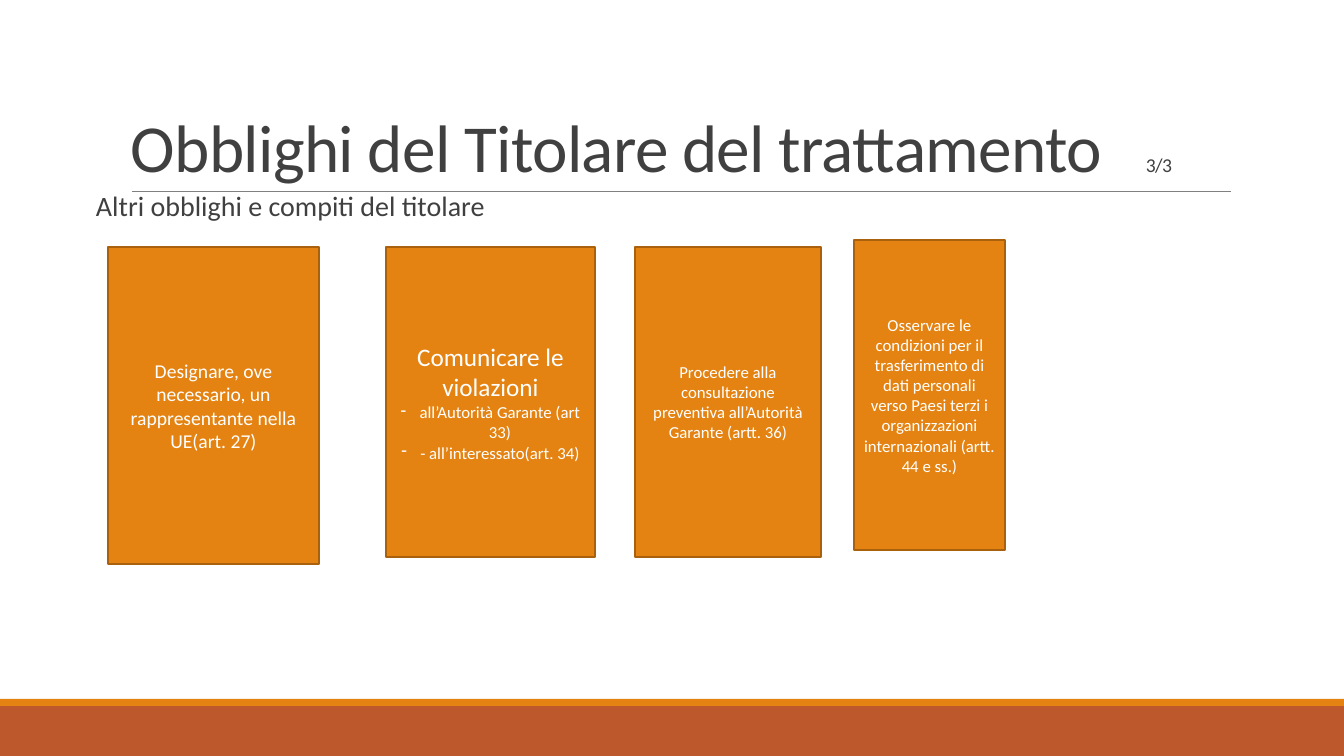
import pptx
import pptx.util
import pptx.dml.color
import pptx.enum.shapes
import pptx.enum.text
import pptx.oxml
import pptx.oxml.ns

WIDE, HIGH = 1344, 756
SCALE = 12192000 / WIDE
FONT = "Calibri"
ORANGE, RUST, EDGE = "E48312", "BD582C", "A9610D"
DARK, GRAY, WHITE = "404040", "808080", "FFFFFF"
ALIGN = pptx.enum.text.PP_ALIGN
ANCHOR = pptx.enum.text.MSO_ANCHOR

# left, top, width, height, lines of (text, size, dashed)
CARDS = [
    (108, 247, 211, 317, [
        ("Designare, ove necessario, un rappresentante nella UE(art. 27)", 14, False)]),
    (386, 247, 209, 310, [
        ("Comunicare le violazioni", 18, False),
        ("all’Autorità Garante (art 33)", 12, True),
        ("- all’interessato(art. 34)", 12, True)]),
    (635, 247, 186, 310, [
        ("Procedere alla consultazione preventiva all’Autorità Garante (artt. 36)", 12, False)]),
    (854, 240, 151, 310, [
        ("Osservare le condizioni per il trasferimento di dati personali verso Paesi "
         "terzi i organizzazioni internazionali (artt. 44 e ss.)", 12, False)]),
]


def px(n):
    return pptx.util.Emu(round(n * SCALE))


def color(code):
    return pptx.dml.color.RGBColor.from_string(code)


def style(para, size, code):
    para.font.name = FONT
    para.font.size = pptx.util.Pt(size)
    para.font.color.rgb = color(code)


def add_prop(para, xml):
    """Put a bullet or tab list ahead of the paragraph's font settings."""
    head, tail = xml.split(" ", 1)
    node = pptx.oxml.parse_xml(f"{head} {pptx.oxml.ns.nsdecls('a')} {tail}")
    font = para._p.pPr.find(pptx.oxml.ns.qn("a:defRPr"))
    font.addprevious(node)


def add_rect(slide, left, top, width, height, fill, edge=None):
    kind = pptx.enum.shapes.MSO_SHAPE.RECTANGLE
    rect = slide.shapes.add_shape(kind, px(left), px(top), px(width), px(height))
    rect.shadow.inherit = False
    rect.fill.solid()
    rect.fill.fore_color.rgb = color(fill)
    if edge:
        rect.line.color.rgb = color(edge)
        rect.line.width = pptx.util.Pt(1.25)
    else:
        rect.line.fill.background()
    return rect


def add_rule(slide, left, right, y):
    kind = pptx.enum.shapes.MSO_CONNECTOR.STRAIGHT
    rule = slide.shapes.add_connector(kind, px(left), px(y), px(right), px(y))
    rule.line.color.rgb = color(GRAY)
    rule.line.width = pptx.util.Pt(0.5)
    props = rule._element.spPr
    props.append(props.makeelement(pptx.oxml.ns.qn("a:effectLst"), {}))


def add_text(slide, left, top, width, height, text, size, space):
    box = slide.shapes.add_textbox(px(left), px(top), px(width), px(height))
    frame = box.text_frame
    frame.word_wrap = True
    para = frame.paragraphs[0]
    para.line_spacing = space
    para.add_run().text = text
    style(para, size, DARK)
    return frame


def add_title(slide):
    frame = add_text(slide, 121, 31, 1109, 160,
                     "Obblighi del Titolare del trattamento", 48, 0.85)
    frame.vertical_anchor = ANCHOR.BOTTOM
    para = frame.paragraphs[0]
    count = para.add_run()
    count.text = "\t3/3"
    count.font.size = pptx.util.Pt(14)
    add_prop(para, f'<a:tabLst ><a:tab pos="{px(1015)}" algn="l"/></a:tabLst>')
    for run in para.runs:
        run.font._element.set("spc", "-50")


def add_card(slide, left, top, width, height, lines):
    card = add_rect(slide, left, top, width, height, ORANGE, EDGE)
    frame = card.text_frame
    frame.word_wrap = True
    frame.vertical_anchor = ANCHOR.MIDDLE
    for i, (text, size, dashed) in enumerate(lines):
        para = frame.add_paragraph() if i else frame.paragraphs[0]
        para.text = text
        para.alignment = ALIGN.CENTER
        style(para, size, WHITE)
        if dashed:
            para._p.pPr.set("marL", str(px(19)))
            para._p.pPr.set("indent", str(-px(19)))
            add_prop(para, '<a:buChar char="-"/>')


def main():
    deck = pptx.Presentation()
    deck.slide_width, deck.slide_height = px(WIDE), px(HIGH)
    slide = deck.slides.add_slide(deck.slide_layouts[6])
    add_rect(slide, 0, 706, WIDE, 50, RUST)
    add_rect(slide, 0, 699, WIDE, 7, ORANGE)
    add_rule(slide, 132, 1231, 191)
    add_title(slide)
    body = add_text(slide, 86, 187, 1129, 484,
                    "Altri obblighi e compiti del titolare", 20, 0.9)
    body.margin_left, body.margin_right = px(10), 0
    for card in CARDS:
        add_card(slide, *card)
    deck.save("out.pptx")


if __name__ == "__main__":
    main()
